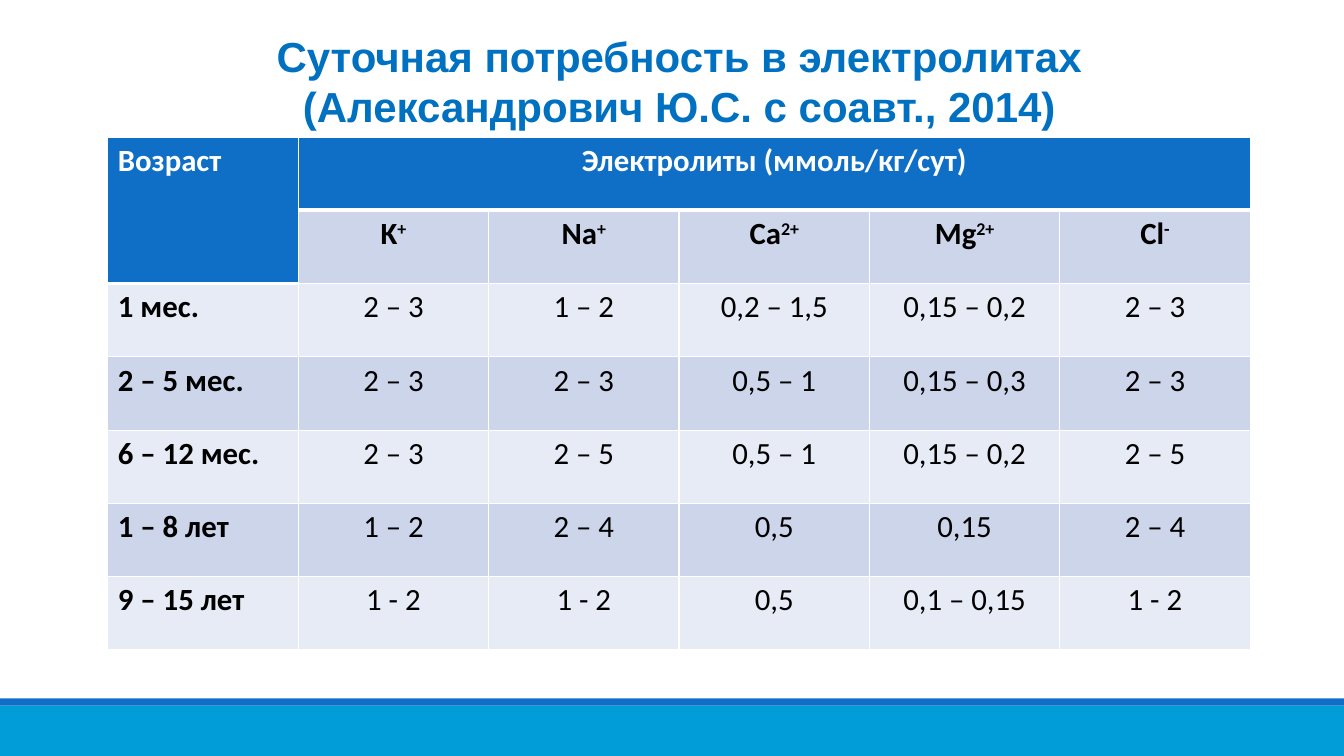
import pptx
import pptx.util
import pptx.dml.color
import pptx.enum.shapes
import pptx.enum.text
import pptx.oxml
import pptx.oxml.ns

TITLE = ["Суточная потребность в электролитах", "(Александрович Ю.С. с соавт., 2014)"]
HEADS = ["Возраст", "Электролиты (ммоль/кг/сут)"]
IONS = [("K", "+"), ("Na", "+"), ("Ca", "2+"), ("Mg", "2+"), ("Cl", "-")]
NEEDS = [
    ("1 мес.", "2 – 3", "1 – 2", "0,2 – 1,5", "0,15 – 0,2", "2 – 3"),
    ("2 – 5 мес.", "2 – 3", "2 – 3", "0,5 – 1", "0,15 – 0,3", "2 – 3"),
    ("6 – 12 мес.", "2 – 3", "2 – 5", "0,5 – 1", "0,15 – 0,2", "2 – 5"),
    ("1 – 8 лет", "1 – 2", "2 – 4", "0,5", "0,15", "2 – 4"),
    ("9 – 15 лет", "1 - 2", "1 - 2", "0,5", "0,1 – 0,15", "1 - 2"),
]
BLUE, CYAN, TITLE_BLUE = "0F6FC6", "009DD9", "0070C0"
BANDS = ["E7EBF5", "CCD5EA"]
WIDTH, HEIGHT = 13.33, 7.5
FOOTER, STRIPE = 0.5, 0.07
TABLE = (1.07, 1.36, 11.33, 5.09)
TITLE_BOX = (1.74, 0.24, 10, 1.12)


def inches(*lengths):
    return [pptx.util.Inches(x) for x in lengths]


def rgb(color):
    return pptx.dml.color.RGBColor.from_string(color)


def set_font(p, name, size, color, bold):
    p.font.name, p.font.size, p.font.bold = name, pptx.util.Pt(size), bold
    p.font.color.rgb = rgb(color)


def add_bar(s, top, height, color):
    bar = s.shapes.add_shape(pptx.enum.shapes.MSO_SHAPE.RECTANGLE,
                             *inches(0, top, WIDTH, height))
    bar.shadow.inherit = False
    bar.fill.solid()
    bar.fill.fore_color.rgb = rgb(color)
    bar.line.fill.background()


def set_borders(cell, top, bottom):
    tcPr = cell._tc.get_or_add_tcPr()
    for side, points in (("L", 1), ("R", 1), ("T", top), ("B", bottom)):
        tcPr.append(pptx.oxml.parse_xml(
            f'<a:ln{side} {pptx.oxml.ns.nsdecls("a")} w="{pptx.util.Pt(points)}">'
            f'<a:solidFill><a:srgbClr val="FFFFFF"/></a:solidFill></a:ln{side}>'))


prs = pptx.Presentation()
prs.slide_width, prs.slide_height = inches(WIDTH, HEIGHT)
s = prs.slides.add_slide(prs.slide_layouts[5])
center = pptx.enum.text.PP_ALIGN.CENTER

# Footer bars
add_bar(s, HEIGHT - FOOTER, FOOTER, CYAN)
add_bar(s, HEIGHT - FOOTER - STRIPE, STRIPE, BLUE)

# Title
title = s.shapes.title
title.left, title.top, title.width, title.height = inches(*TITLE_BOX)
tf = title.text_frame
tf.text = "\n".join(TITLE)
tf.word_wrap = True
tf.auto_size = pptx.enum.text.MSO_AUTO_SIZE.NONE
tf.vertical_anchor = pptx.enum.text.MSO_ANCHOR.MIDDLE
for p in tf.paragraphs:
    p.alignment = center
    set_font(p, "Arial", 30, TITLE_BLUE, True)

# Table grid: two heading rows, then one row per age
rows, cols = len(NEEDS) + 2, len(IONS) + 1
table = s.shapes.add_table(rows, cols, *inches(*TABLE)).table
for column in table.columns:
    column.width = pptx.util.Inches(TABLE[2] / cols)
for row in table.rows:
    row.height = pptx.util.Inches(TABLE[3] / rows)
table.cell(0, 0).merge(table.cell(1, 0))
table.cell(0, 1).merge(table.cell(0, cols - 1))

# Table cells
texts = [HEADS + [""] * (cols - 2), [""] + IONS, *NEEDS]
for i, line in enumerate(texts):
    for j, text in enumerate(line):
        cell = table.cell(i, j)
        head_rows = 2 if j == 0 else 1
        is_head = i < head_rows
        set_borders(cell, 3 if i == head_rows else 1,
                    3 if i == head_rows - 1 or (i, j) == (0, 0) else 1)
        cell.fill.solid()
        cell.fill.fore_color.rgb = rgb(BLUE if is_head else BANDS[i % 2])
        p = cell.text_frame.paragraphs[0]
        if j:
            p.alignment = center
        set_font(p, "Calibri", 22, "FFFFFF" if is_head else "000000", i < 2 or j == 0)
        if isinstance(text, tuple):
            symbol, charge = text
            p.add_run().text = symbol
            r = p.add_run()
            r.text = charge
            r.font._element.set("baseline", "30000")
        elif text:
            p.add_run().text = text

prs.save("out.pptx")
